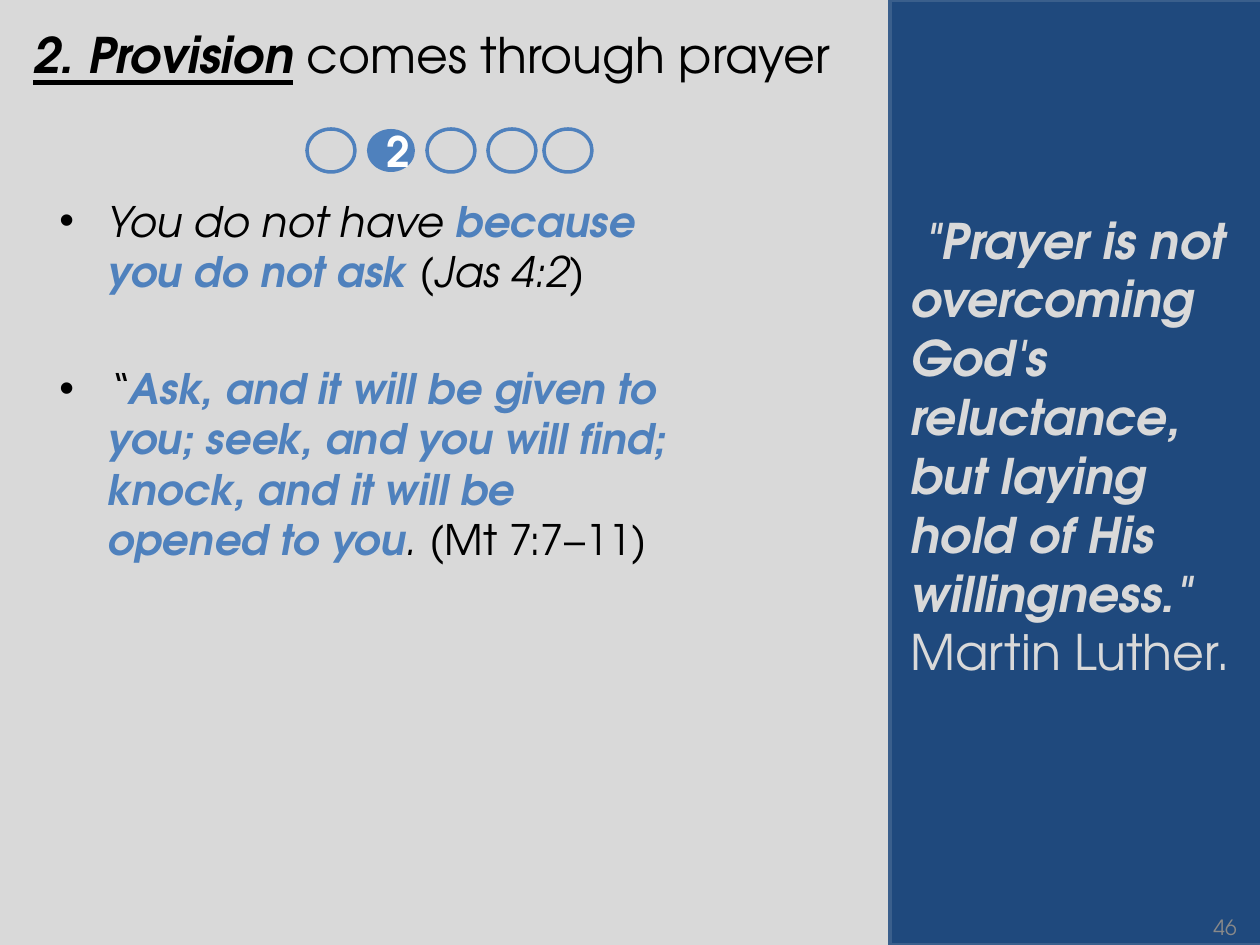
"""Build the prayer slide: numbered point, progress dots, verses and quote panel."""
from dataclasses import dataclass

from lxml import etree
from pptx import Presentation
from pptx import util as u
from pptx.dml.color import RGBColor
from pptx.enum import shapes, text
from pptx.oxml.ns import qn


@dataclass(frozen=True)
class Theme:
    font: str = "TeX Gyre Adventor"
    paper: str = "D9D9D9"
    navy: str = "1F497D"
    edge: str = "3A5F8C"
    blue: str = "4F81BD"
    ink: str = "000000"
    white: str = "FFFFFF"
    grey: str = "898989"
    large: int = 28
    medium: int = 24
    small: int = 12
    rule: int = 2


THEME = Theme()
PX = u.Inches(1) / 126
PLAIN, ITALIC, BOLD, STRONG = "", "i", "b", "bi"

TITLE = [("2. Provision", "biu", THEME.ink), (" comes through prayer", PLAIN, THEME.ink)]
VERSES = [
    [("You do not have ", ITALIC, THEME.ink),
     ("because you do not ask ", STRONG, THEME.blue),
     ("(Jas 4:2)", ITALIC, THEME.ink)],
    [("“", ITALIC, THEME.ink),
     ("Ask, and it will be given to you; seek, and you will find; "
      "knock, and it will be opened to you", STRONG, THEME.blue),
     (". ", ITALIC, THEME.ink),
     ("(Mt 7:7–11)", PLAIN, THEME.ink)],
]
QUOTE = [
    ("\u00a0\"Prayer\u00a0is not overcoming God's reluctance, but laying hold "
     "of His willingness.\"", STRONG, THEME.paper),
    ("\n", PLAIN, THEME.paper),
    ("Martin Luther.", PLAIN, THEME.paper),
]
PAGE = [("46", PLAIN, THEME.grey)]
STEP = [("2", BOLD, THEME.white)]

PANEL = (890, 0, 372, 945)
TITLE_BOX = (21, 18, 843, 69)
VERSES_BOX = (47, 189, 639, 576)
QUOTE_BOX = (898, 204, 359, 469)
PAGE_BOX = (955, 902, 294, 50)
DOT_LEFTS = (307, 367, 427, 488, 544)
DOT_TOP, DOT_WIDTH, DOT_HEIGHT = 129, 48, 43
CURRENT_DOT = 1
HANGING = 48
VERSE_GAP = 38


def emu(*lengths):
    return [round(length * PX) for length in lengths]


def rgb(colour):
    return RGBColor.from_string(colour)


def write(paragraph, runs, size):
    for words, style, colour in runs:
        if words == "\n":
            paragraph.add_line_break()
            continue
        run = paragraph.add_run()
        run.text = words
        run.font.bold = "b" in style
        run.font.italic = "i" in style
        run.font.underline = "u" in style
        run.font.color.rgb = rgb(colour)
    paragraph.font.name = THEME.font
    paragraph.font.size = u.Pt(size)


def add_text(slide, box, paragraphs, size):
    frame = slide.shapes.add_textbox(*emu(*box)).text_frame
    frame.word_wrap = True
    for index, runs in enumerate(paragraphs):
        paragraph = frame.add_paragraph() if index else frame.paragraphs[0]
        write(paragraph, runs, size)
    return frame


def add_bullet(paragraph):
    properties = paragraph._p.get_or_add_pPr()
    (hanging,) = emu(HANGING)
    properties.set("marL", str(hanging))
    properties.set("indent", str(-hanging))
    face = etree.Element(qn("a:buFont"), typeface="Arial")
    mark = etree.Element(qn("a:buChar"), char="•")
    defaults = properties.find(qn("a:defRPr"))
    defaults.addprevious(face)
    defaults.addprevious(mark)


def add_shape(slide, kind, box, fill=None, line=None):
    shape = slide.shapes.add_shape(kind, *emu(*box))
    shape.shadow.inherit = False
    if fill:
        shape.fill.solid()
        shape.fill.fore_color.rgb = rgb(fill)
    else:
        shape.fill.background()
    if line:
        shape.line.color.rgb = rgb(line)
        shape.line.width = u.Pt(THEME.rule)
    else:
        shape.line.fill.background()
    return shape


def add_dots(slide):
    for index, left in enumerate(DOT_LEFTS):
        box = (left, DOT_TOP, DOT_WIDTH, DOT_HEIGHT)
        oval = shapes.MSO_SHAPE.OVAL
        if index == CURRENT_DOT:
            dot = add_shape(slide, oval, box, fill=THEME.blue)
            write(dot.text_frame.paragraphs[0], STEP, THEME.medium)
        else:
            add_shape(slide, oval, box, line=THEME.blue)


def main():
    deck = Presentation()
    deck.slide_width, deck.slide_height = u.Inches(10), u.Inches(7.5)
    slide = deck.slides.add_slide(deck.slide_layouts[6])
    slide.background.fill.solid()
    slide.background.fill.fore_color.rgb = rgb(THEME.paper)

    add_shape(slide, shapes.MSO_SHAPE.RECTANGLE, PANEL, THEME.navy, THEME.edge)
    add_text(slide, TITLE_BOX, [TITLE], THEME.large)
    verses = add_text(slide, VERSES_BOX, VERSES, THEME.medium)
    for index, verse in enumerate(verses.paragraphs):
        add_bullet(verse)
        if index:
            verse.space_before = u.Pt(VERSE_GAP)
    page = add_text(slide, PAGE_BOX, [PAGE], THEME.small)
    page.vertical_anchor = text.MSO_ANCHOR.MIDDLE
    page.paragraphs[0].alignment = text.PP_ALIGN.RIGHT
    add_text(slide, QUOTE_BOX, [QUOTE], THEME.large)
    add_dots(slide)
    deck.save("out.pptx")


if __name__ == "__main__":
    main()
